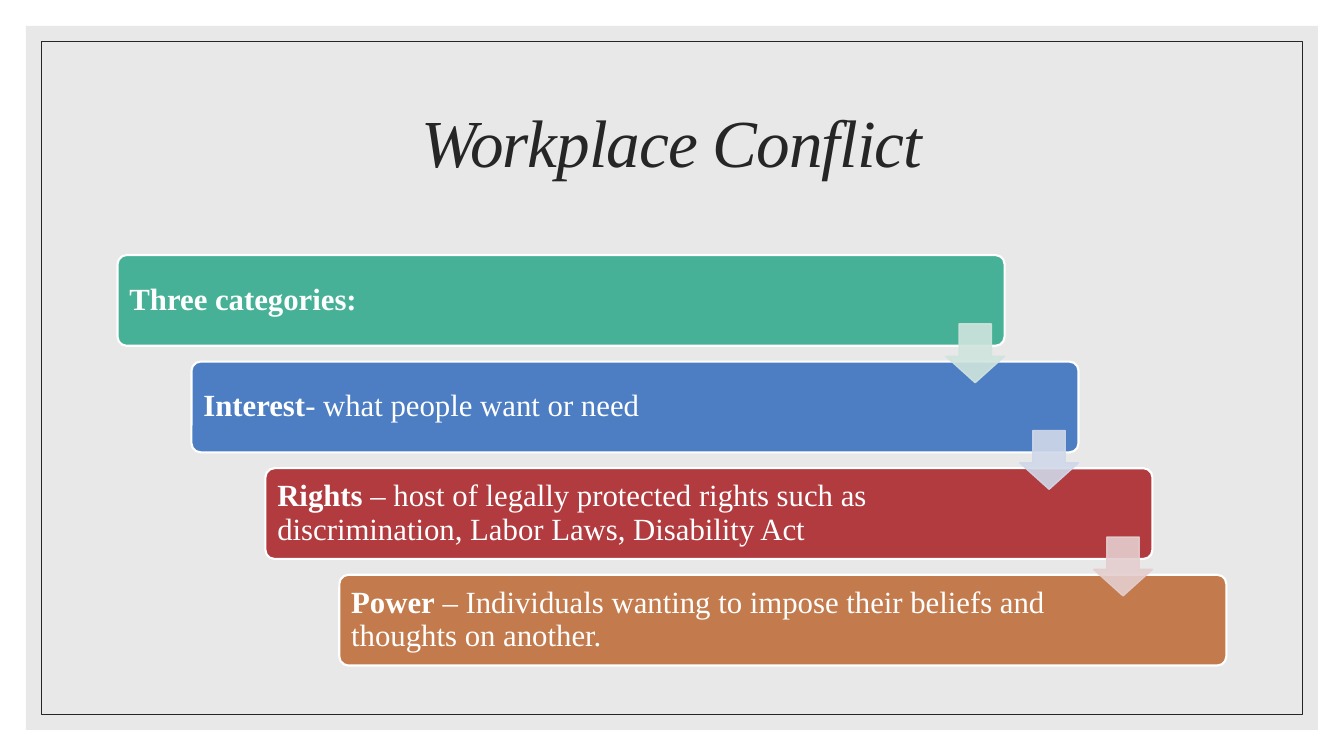
from lxml import etree
from pptx import Presentation
from pptx import util as u
from pptx.dml import color as colors
from pptx.enum import shapes, text
from pptx.oxml import ns

FONT = "Times New Roman"
SLIDE_BOX = (0, 0, 960, 540)
STEPS = [
    ("Three categories:", "", "46B196", "CFE4DD"),
    ("Interest", "- what people want or need", "4D7EC3", "D0D8E9"),
    ("Rights", " – host of legally protected rights such as discrimination, "
     "Labor Laws, Disability Act", "B13B3E", "E4CECE"),
    ("Power", " – Individuals wanting to impose their beliefs and thoughts "
     "on another.", "C37B4D", None),
]


def paint(target, hex_color, opacity=100):
    target.solid()
    target.fore_color.rgb = colors.RGBColor.from_string(hex_color)
    if opacity < 100:
        for tone in target._xPr.iter(ns.qn("a:srgbClr")):
            if tone.getparent().getparent() is target._xPr:
                etree.SubElement(tone, ns.qn("a:alpha"), val=str(opacity * 1000))


def add_box(page, kind, box, fill=None, line=None, width=1, opacity=100):
    shape = page.shapes.add_shape(kind, *map(u.Pt, box))
    shape.shadow.inherit = False
    if fill:
        paint(shape.fill, fill, opacity)
    else:
        shape.fill.background()
    if line:
        shape.line.width = u.Pt(width)
        paint(shape.line.fill, line, opacity)
    else:
        shape.line.fill.background()
    return shape


def add_text(page, box, size, color, inset):
    frame = page.shapes.add_textbox(*map(u.Pt, box)).text_frame
    frame.word_wrap = True
    frame.vertical_anchor = text.MSO_ANCHOR.MIDDLE
    frame.margin_left = frame.margin_right = u.Pt(inset)
    frame.margin_top = frame.margin_bottom = u.Pt(inset)
    para = frame.paragraphs[0]
    para.line_spacing = 0.9
    para.font.name = FONT
    para.font.size = u.Pt(size)
    paint(para.font.fill, color)
    return para


def add_frame(page, box):
    left, top, width, height = box
    rectangle = shapes.MSO_SHAPE.RECTANGLE

    def inner(gap):
        return left + gap, top + gap, width - 2 * gap, height - 2 * gap

    add_box(page, rectangle, box, "FFFFFF")
    add_box(page, rectangle, inner(18.6), "D9D9D9", opacity=60)
    add_box(page, rectangle, inner(29.4), line="262626", width=0.5)


def add_title(page, box):
    para = add_text(page, box, 48, "262626", 3.6)
    para.alignment = text.PP_ALIGN.CENTER
    para.font.italic = True
    span = para.add_run()
    span.text = "Workplace Conflict"
    span.font._element.set("spc", "-70")


def add_staircase(page, box):
    left, top, width, height = box
    bar_width, bar_height, arrow_size = width * 0.8, 64.8, 42
    shift = (width - bar_width) / (len(STEPS) - 1)
    drop = (height - bar_height) / (len(STEPS) - 1)
    corners = [(left + i * shift, top + i * drop) for i in range(len(STEPS))]

    for (x, y), (term, detail, fill, _) in zip(corners, STEPS):
        bar = add_box(page, shapes.MSO_SHAPE.ROUNDED_RECTANGLE,
                      (x, y, bar_width, bar_height), fill, "FFFFFF", 1.5)
        bar.adjustments[0] = 0.1
        para = add_text(page, (x + 1.9, y + 1.9, 535, bar_height - 3.8),
                        22, "FFFFFF", 6.6)
        span = para.add_run()
        span.text = term
        span.font.bold = True
        if detail:
            para.add_run().text = detail

    for (x, y), (_, _, _, tint) in zip(corners[:-1], STEPS):
        arrow = add_box(page, shapes.MSO_SHAPE.DOWN_ARROW,
                        (x + bar_width - arrow_size, y + 49.2,
                         arrow_size, arrow_size), tint, tint, 1, 90)
        arrow.adjustments[0] = 0.55
        arrow.adjustments[1] = 0.45


def main():
    deck = Presentation()
    deck.slide_width, deck.slide_height = u.Pt(960), u.Pt(540)
    page = deck.slides.add_slide(deck.slide_layouts[6])
    add_frame(page, SLIDE_BOX)
    add_title(page, (84, 50.4, 792, 108))
    add_staircase(page, (84, 182.2, 792, 293.2))
    deck.save("out.pptx")


if __name__ == "__main__":
    main()
